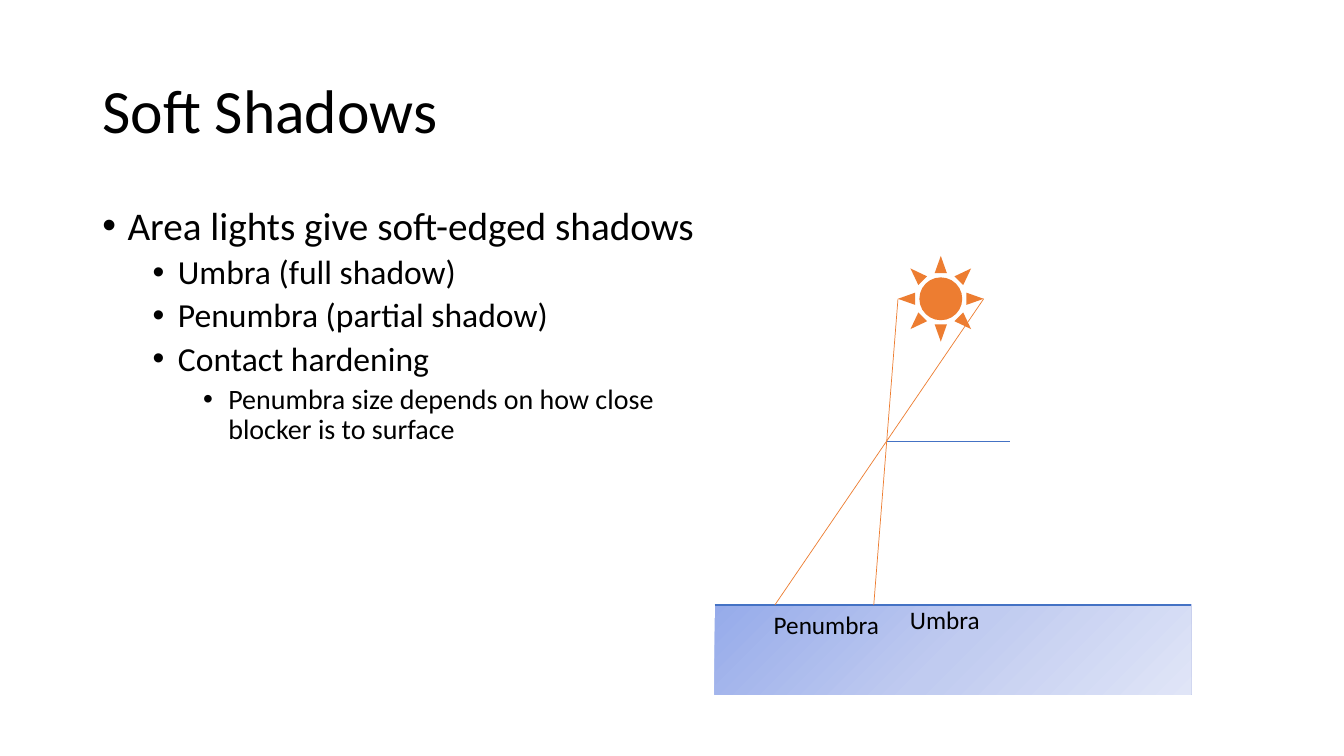
from pptx import Presentation
from pptx.dml.color import RGBColor
from pptx.enum.shapes import MSO_CONNECTOR, MSO_SHAPE
from pptx.enum.text import MSO_ANCHOR
from pptx.oxml.ns import qn
from pptx.util import Cm, Pt
from copy import deepcopy
from lxml.etree import SubElement

BLACK = RGBColor(0x00, 0x00, 0x00)
BLUE = RGBColor(0x44, 0x72, 0xC4)
ORANGE = RGBColor(0xED, 0x7D, 0x31)
SHADES = [RGBColor(0x96, 0xAB, 0xEA), RGBColor(0xC0, 0xCB, 0xF0),
          RGBColor(0xE0, 0xE5, 0xF7)]
FONT = "Calibri"
POINTS = [
    (0, "Area lights give soft-edged shadows"),
    (1, "Umbra (full shadow)"),
    (1, "Penumbra (partial shadow)"),
    (1, "Contact hardening"),
    (2, "Penumbra size depends on how close\nblocker is to surface"),
]
SIZES = [28, 24, 20]


def add_frame(slide, left, top, width, height, wrap=True):
    """Add a text box and return its frame."""
    box = slide.shapes.add_textbox(Cm(left), Cm(top), Cm(width), Cm(height))
    box.text_frame.word_wrap = wrap
    return box.text_frame


def add_text(para, text, size):
    """Add the lines of a text as styled runs."""
    for index, line in enumerate(text.split("\n")):
        if index:
            para.add_line_break()
        run = para.add_run()
        run.text = line
        run.font.name = FONT
        run.font.size = Pt(size)
        run.font.color.rgb = BLACK


def add_title(slide, left, top, width, height):
    """Place the title, centred in height."""
    frame = add_frame(slide, left, top, width, height)
    frame.vertical_anchor = MSO_ANCHOR.MIDDLE
    para = frame.paragraphs[0]
    para.line_spacing = 0.9
    add_text(para, "Soft Shadows", 44)


def add_points(slide, left, top, width, height):
    """Place the bullet list with its three levels."""
    frame = add_frame(slide, left, top, width, height)
    for index, (level, text) in enumerate(POINTS):
        para = frame.add_paragraph() if index else frame.paragraphs[0]
        para.level = level
        para.line_spacing = 0.9
        para.space_before = Pt(5 if level else 10)
        props = para._p.get_or_add_pPr()
        props.set("marL", str(Cm(0.635 + 1.27 * level)))
        props.set("indent", str(-Cm(0.635)))
        SubElement(props, qn("a:buFont")).set("typeface", "Arial")
        SubElement(props, qn("a:buChar")).set("char", "•")
        add_text(para, text, SIZES[level])


def add_line(slide, start, end, color, weight):
    """Draw a straight line without shadow."""
    ends = [Cm(value) for value in (*start, *end)]
    line = slide.shapes.add_connector(MSO_CONNECTOR.STRAIGHT, *ends)
    line.line.color.rgb = color
    line.line.width = Pt(weight)
    SubElement(line._element.spPr, qn("a:effectLst"))


def add_solid(slide, kind, left, top, width, height):
    """Add a preset shape without outline or shadow."""
    shape = slide.shapes.add_shape(
        kind, Cm(left), Cm(top), Cm(width), Cm(height))
    shape.shadow.inherit = False
    shape.line.fill.background()
    return shape


def add_ground(slide, left, top, width, height):
    """Draw the shaded ground with its top edge."""
    ground = add_solid(slide, MSO_SHAPE.RECTANGLE, left, top, width, height)
    ground.fill.gradient()
    ground.fill.gradient_angle = 315
    first = ground._element.spPr.find(".//" + qn("a:gs"))
    first.addnext(deepcopy(first))
    for index, stop in enumerate(ground.fill.gradient_stops):
        stop.position = index / 2
        stop.color.rgb = SHADES[index]
    add_line(slide, (left, top), (left + width, top), BLUE, 1.5)


def add_scene(slide, left, top, width, height):
    """Draw the light, blocker, rays and ground in a box."""
    floor = top + height - 2.26
    add_ground(slide, left, floor, width, 2.26)
    block = top + 4.68
    add_line(slide, (left + 4.34, block), (left + 7.44, block), BLUE, 0.5)
    size = 2.16
    light = left + 4.62
    sun = add_solid(slide, MSO_SHAPE.SUN, light, top, size, size)
    sun.fill.solid()
    sun.fill.fore_color.rgb = ORANGE
    for source, target in ((light, 4.01), (light + size, 1.52)):
        add_line(slide, (source, top + size / 2), (left + target, floor),
                 ORANGE, 0.5)
    for text, shift, rise, span in (("Umbra", 4.67, 0.13, 2.29),
                                    ("Penumbra", 1.24, 0, 3.2)):
        frame = add_frame(slide, left + shift, floor - rise, span, 1.02, False)
        add_text(frame.paragraphs[0], text, 18)


def main():
    """Build the slide and save it."""
    deck = Presentation()
    deck.slide_width = Cm(33.87)
    deck.slide_height = Cm(19.05)
    slide = deck.slides.add_slide(deck.slide_layouts[6])
    add_title(slide, 2.33, 1.01, 29.21, 3.68)
    add_points(slide, 2.33, 5.07, 29.21, 12.09)
    add_scene(slide, 18.01, 6.45, 12.01, 11.05)
    deck.save("out.pptx")


if __name__ == "__main__":
    main()
